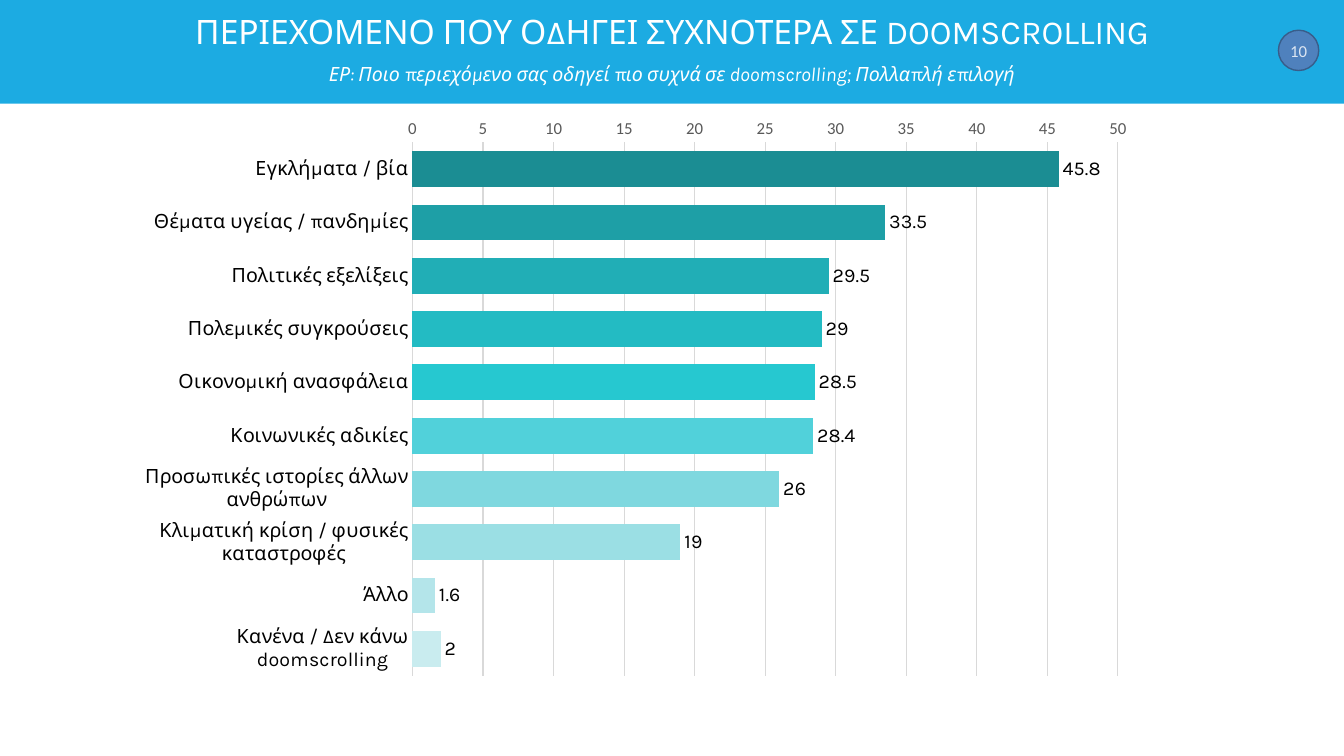
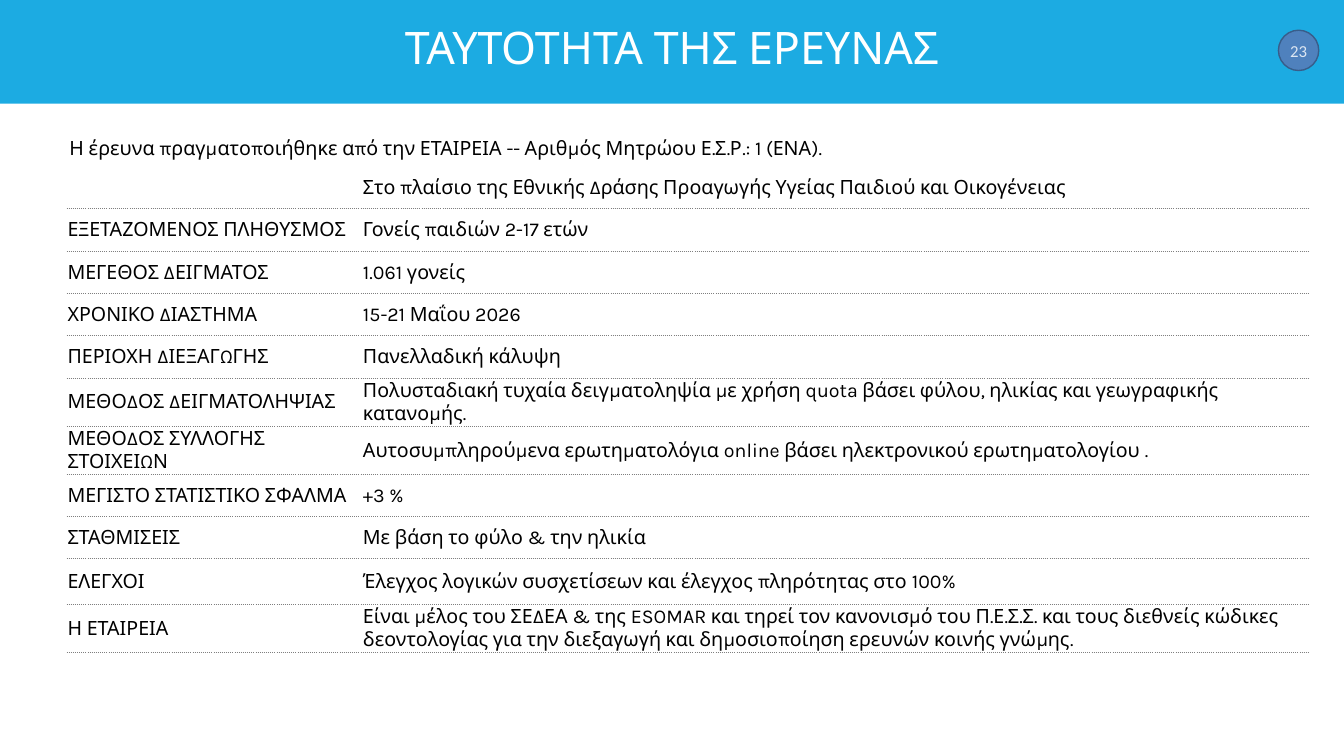
from dataclasses import dataclass

from pptx import Presentation
from pptx.chart.data import CategoryChartData
from pptx.dml.color import RGBColor
from pptx.enum.chart import XL_AXIS_CROSSES, XL_CHART_TYPE, XL_LABEL_POSITION, XL_TICK_MARK
from pptx.enum.shapes import MSO_SHAPE
from pptx.enum.text import MSO_ANCHOR, PP_ALIGN
from pptx.oxml import parse_xml
from pptx.oxml.ns import nsdecls, qn
from pptx.util import Inches, Pt


@dataclass(frozen=True)
class Theme:
    band: str = "1CABE2"
    badge: str = "4F81BD"
    badge_line: str = "385D8A"
    badge_text: str = "DCE6F2"
    white: str = "FFFFFF"
    text: str = "000000"
    axis_text: str = "595959"
    grid: str = "D9D9D9"
    row_line: str = "7F7F7F"
    font: str = "Karla"
    number_font: str = "Calibri"
    title: int = 32
    long_title: int = 24
    body: int = 14
    small: int = 12


THEME = Theme()
SLIDE_WIDTH = 13.33
NO_GRID_STYLE = "{2D5ABB26-0587-4C30-8999-92F81FD0307C}"

CONTENT_SHARES = [
    ("Εγκλήματα / βία", 45.8, "1B8D93"),
    ("Θέματα υγείας / πανδημίες", 33.5, "1E9FA6"),
    ("Πολιτικές εξελίξεις", 29.5, "21AEB6"),
    ("Πολεμικές συγκρούσεις", 29, "23BBC3"),
    ("Οικονομική ανασφάλεια", 28.5, "26C8D0"),
    ("Κοινωνικές αδικίες", 28.4, "51D1DA"),
    ("Προσωπικές ιστορίες άλλων ανθρώπων", 26, "7FD8DF"),
    ("Κλιματική κρίση / φυσικές καταστροφές", 19, "9BDFE4"),
    ("Άλλο", 1.6, "B4E5EA"),
    ("Κανένα / Δεν κάνω doomscrolling", 2, "C9ECEF"),
]

ROW_HEIGHT = 0.42
TALL_ROW_HEIGHT = 0.45
TALL_ROWS = {6, 9, 10}
SURVEY_ROWS = [
    ("", "Στο πλαίσιο της Εθνικής Δράσης Προαγωγής Υγείας Παιδιού και Οικογένειας"),
    ("ΕΞΕΤΑΖΟΜΕΝΟΣ ΠΛΗΘΥΣΜΟΣ", "Γονείς παιδιών 2-17 ετών"),
    ("ΜΕΓΕΘΟΣ ΔΕΙΓΜΑΤΟΣ", "1.061 γονείς"),
    ("ΧΡΟΝΙΚΟ ΔΙΑΣΤΗΜΑ", "15-21 Μαΐου 2026"),
    ("ΠΕΡΙΟΧΗ ΔΙΕΞΑΓΩΓΗΣ", "Πανελλαδική κάλυψη"),
    ("ΜΕΘΟΔΟΣ ΔΕΙΓΜΑΤΟΛΗΨΙΑΣ",
     "Πολυσταδιακή τυχαία δειγματοληψία με χρήση quota βάσει φύλου, ηλικίας και "
     "γεωγραφικής κατανομής."),
    ("ΜΕΘΟΔΟΣ ΣΥΛΛΟΓΗΣ ΣΤΟΙΧΕΙΩΝ",
     "Αυτοσυμπληρούμενα ερωτηματολόγια online βάσει ηλεκτρονικού ερωτηματολογίου ."),
    ("ΜΕΓΙΣΤΟ ΣΤΑΤΙΣΤΙΚΟ ΣΦΑΛΜΑ", "+3 %"),
    ("ΣΤΑΘΜΙΣΕΙΣ", "Με βάση το φύλο & την ηλικία"),
    ("ΕΛΕΓΧΟΙ", "Έλεγχος λογικών συσχετίσεων και έλεγχος πληρότητας στο 100%"),
    ("Η ΕΤΑΙΡΕΙΑ",
     "Είναι μέλος του ΣΕΔΕΑ & της ESOMAR και τηρεί τον κανονισμό του Π.Ε.Σ.Σ. και τους "
     "διεθνείς κώδικες δεοντολογίας για την διεξαγωγή και δημοσιοποίηση ερευνών κοινής γνώμης."),
]


def color(value):
    return RGBColor.from_string(value)


def style_font(font, size, value=THEME.text, name=THEME.font):
    font.size = Pt(size)
    font.name = name
    font.color.rgb = color(value)


def add_filled_shape(slide, kind, left, top, width, height, fill):
    shape = slide.shapes.add_shape(
        kind, Inches(left), Inches(top), Inches(width), Inches(height))
    shape.shadow.inherit = False
    shape.fill.solid()
    shape.fill.fore_color.rgb = color(fill)
    shape.line.fill.background()
    return shape


def add_text_frame(slide, left, top, width, height):
    box = slide.shapes.add_textbox(Inches(left), Inches(top), Inches(width), Inches(height))
    box.text_frame.word_wrap = True
    return box.text_frame


def add_page_badge(slide, number):
    badge = add_filled_shape(slide, MSO_SHAPE.OVAL, 12.68, 0.3, 0.4, 0.4, THEME.badge)
    badge.line.color.rgb = color(THEME.badge_line)
    badge.line.width = Pt(1)
    frame = badge.text_frame
    frame.word_wrap = False
    frame.vertical_anchor = MSO_ANCHOR.MIDDLE
    frame.margin_left = frame.margin_right = frame.margin_top = frame.margin_bottom = 0
    paragraph = frame.paragraphs[0]
    paragraph.text = str(number)
    paragraph.alignment = PP_ALIGN.CENTER
    style_font(paragraph.font, THEME.small, THEME.badge_text, THEME.number_font)


def add_title_line(paragraph, text, size):
    paragraph.text = text
    paragraph.alignment = PP_ALIGN.CENTER
    paragraph.line_spacing = 0.9
    style_font(paragraph.font, size, THEME.white)


def add_header(slide, number, title, size, width, question=None):
    """Draw the band, page badge and title, with the survey question under it if given."""
    add_filled_shape(slide, MSO_SHAPE.RECTANGLE, 0, 0, SLIDE_WIDTH, 1.03, THEME.band)
    add_page_badge(slide, number)
    frame = add_text_frame(slide, (SLIDE_WIDTH - width) / 2, 0.06, width, 0.88)
    frame.vertical_anchor = MSO_ANCHOR.MIDDLE
    add_title_line(frame.paragraphs[0], title, size)
    if question:
        paragraph = frame.add_paragraph()
        add_title_line(paragraph, question, THEME.body)
        paragraph.space_before = Pt(9)
        paragraph.font.italic = True


def set_plot_layout(chart, left, top, width, height):
    """Place the inner plot area, in fractions of the chart."""
    plot_area = chart._chartSpace.chart.plotArea
    for layout in plot_area.findall(qn("c:layout")):
        plot_area.remove(layout)
    sizes = "".join(f'<c:{tag} val="{value}"/>' for tag, value in
                    (("x", left), ("y", top), ("w", width), ("h", height)))
    plot_area.insert(0, parse_xml(
        f'<c:layout {nsdecls("c")}><c:manualLayout><c:layoutTarget val="inner"/>'
        f'<c:xMode val="edge"/><c:yMode val="edge"/>{sizes}</c:manualLayout></c:layout>'))


def style_axes(chart):
    category_axis, value_axis = chart.category_axis, chart.value_axis
    for axis in (category_axis, value_axis):
        axis.major_tick_mark = axis.minor_tick_mark = XL_TICK_MARK.NONE
    category_axis.reverse_order = True
    category_axis.crosses = XL_AXIS_CROSSES.MAXIMUM
    category_axis.has_major_gridlines = False
    style_font(category_axis.tick_labels.font, THEME.body)

    value_axis.minimum_scale, value_axis.maximum_scale = 0, 50
    value_axis.major_unit = 5
    value_axis.has_major_gridlines = True
    value_axis.format.line.fill.background()
    style_font(value_axis.tick_labels.font, THEME.small, THEME.axis_text, THEME.number_font)

    for line in (category_axis.format.line, value_axis.major_gridlines.format.line):
        line.color.rgb = color(THEME.grid)
        line.width = Pt(0.75)


def add_bar_chart(slide, bars):
    names, values, fills = zip(*bars)
    data = CategoryChartData()
    data.categories = names
    data.add_series("Series 1", values)
    chart = slide.shapes.add_chart(
        XL_CHART_TYPE.BAR_CLUSTERED, Inches(1.21), Inches(1.11),
        Inches(10.29), Inches(6.08), data).chart
    chart.has_legend = chart.has_title = False
    style_font(chart.font, 10, name=THEME.number_font)
    set_plot_layout(chart, 0.28, 0.05, 0.68, 0.87)
    style_axes(chart)

    plot = chart.plots[0]
    plot.gap_width = 49
    plot.vary_by_categories = False
    plot.has_data_labels = True
    labels = plot.data_labels
    labels.show_value = True
    labels.position = XL_LABEL_POSITION.OUTSIDE_END
    style_font(labels.font, THEME.body)
    for index, fill in enumerate(fills):
        point_fill = plot.series[0].points[index].format.fill
        point_fill.solid()
        point_fill.fore_color.rgb = color(fill)


def fill_cell(cell, text):
    """Write the text and draw a dotted line under the cell."""
    cell.fill.background()
    cell.vertical_anchor = MSO_ANCHOR.MIDDLE
    cell.margin_left = cell.margin_right = cell.margin_top = Inches(0.01)
    cell.margin_bottom = 0
    paragraph = cell.text_frame.paragraphs[0]
    paragraph.text = text
    style_font(paragraph.font, THEME.body)
    cell._tc.get_or_add_tcPr().insert(0, parse_xml(
        f'<a:lnB {nsdecls("a")} w="{Pt(0.5)}"><a:solidFill><a:srgbClr val="{THEME.row_line}"/>'
        '</a:solidFill><a:prstDash val="dot"/></a:lnB>'))


def add_survey_table(slide, rows):
    heights = [TALL_ROW_HEIGHT if index in TALL_ROWS else ROW_HEIGHT
               for index in range(len(rows))]
    table = slide.shapes.add_table(
        len(rows), 2, Inches(0.66), Inches(1.65), Inches(12.32), Inches(sum(heights))).table
    table.first_row = table.horz_banding = False
    table._tbl.tblPr.find(qn("a:tableStyleId")).text = NO_GRID_STYLE
    for column, width in zip(table.columns, (2.93, 9.39)):
        column.width = Inches(width)
    for row, height, texts in zip(table.rows, heights, rows):
        row.height = Inches(height)
        for cell, text in zip(row.cells, texts):
            fill_cell(cell, text)


def add_intro(slide, text):
    paragraph = add_text_frame(slide, 0.59, 1.18, 8.92, 0.42).paragraphs[0]
    paragraph.text = text
    paragraph.line_spacing = 1.5
    style_font(paragraph.font, THEME.body)


def main():
    presentation = Presentation()
    presentation.slide_width = Inches(SLIDE_WIDTH)
    presentation.slide_height = Inches(7.5)
    blank = presentation.slide_layouts[6]

    slide = presentation.slides.add_slide(blank)
    add_header(slide, 10, "ΠΕΡΙΕΧΟΜΕΝΟ ΠΟΥ ΟΔΗΓΕΙ ΣΥΧΝΟΤΕΡΑ ΣΕ DOOMSCROLLING",
               THEME.long_title, 11.99,
               "ΕΡ: Ποιο περιεχόμενο σας οδηγεί πιο συχνά σε doomscrolling; Πολλαπλή επιλογή")
    add_bar_chart(slide, CONTENT_SHARES)

    slide = presentation.slides.add_slide(blank)
    add_header(slide, 23, "ΤΑΥΤΟΤΗΤΑ ΤΗΣ ΕΡΕΥΝΑΣ", THEME.title, 11.5)
    add_intro(slide, "Η έρευνα πραγματοποιήθηκε από την ΕΤΑΙΡΕΙΑ -- "
                     "Αριθμός Μητρώου Ε.Σ.Ρ.: 1 (ΕΝΑ).")
    add_survey_table(slide, SURVEY_ROWS)

    presentation.save("out.pptx")


if __name__ == "__main__":
    main()
